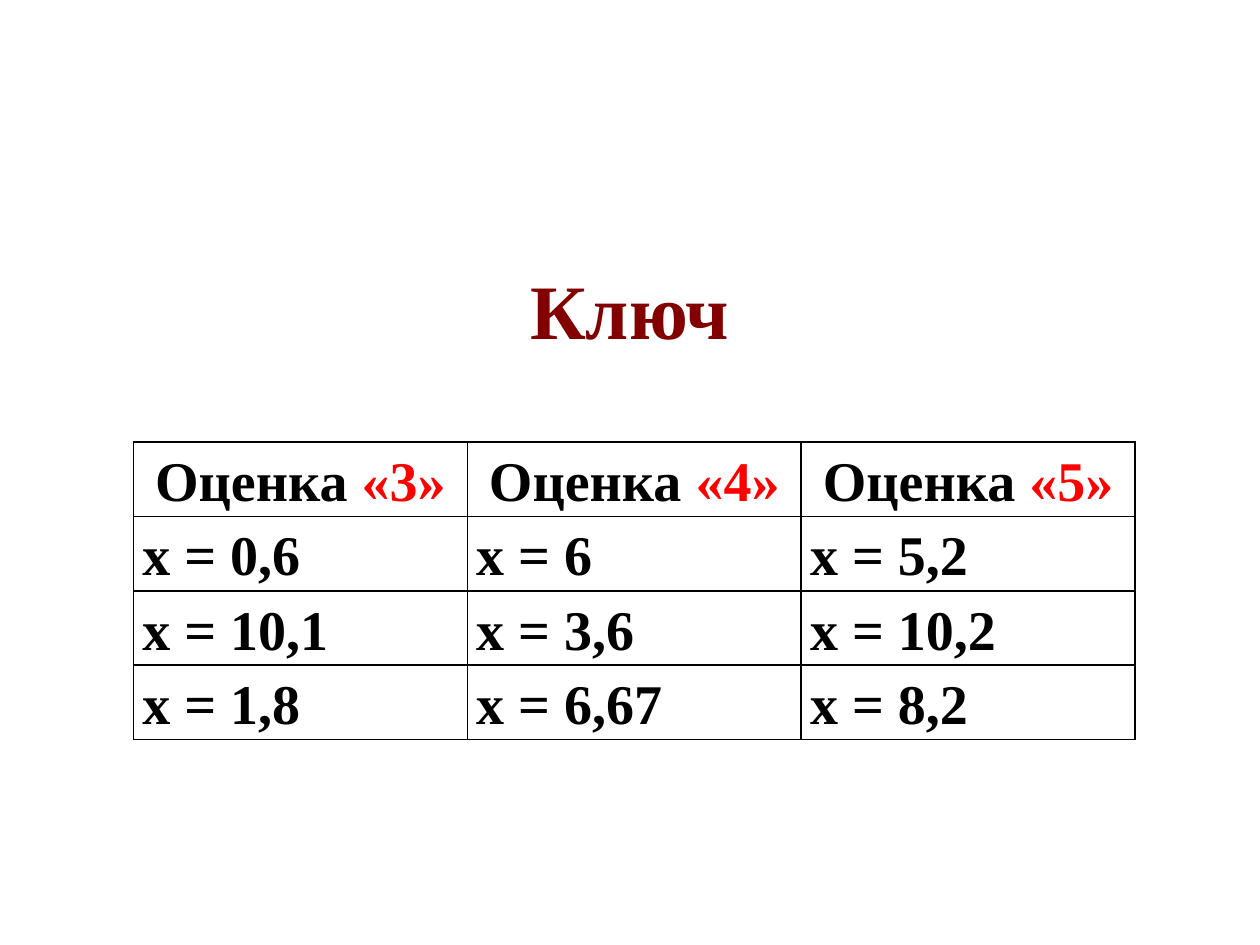
from dataclasses import dataclass

from lxml import etree
from pptx import Presentation
from pptx.dml.color import RGBColor
from pptx.enum.text import MSO_ANCHOR, PP_ALIGN
from pptx.oxml.ns import qn
from pptx.util import Inches, Pt

CENTER, JUSTIFY = PP_ALIGN.CENTER, PP_ALIGN.JUSTIFY
MIDDLE = MSO_ANCHOR.MIDDLE
TITLE_ONLY = 5

TITLE = "Ключ"
GRADES = ["«3»", "«4»", "«5»"]
ANSWERS = [
    ["0,6", "6", "5,2"],
    ["10,1", "3,6", "10,2"],
    ["1,8", "6,67", "8,2"],
]


@dataclass(frozen=True)
class Theme:
    font: str = "Times New Roman"
    title_size: int = 44
    table_size: int = 32
    title: str = "820000"
    ink: str = "000000"
    grade: str = "FF0000"
    paper: str = "FFFFFF"
    border_width: int = 1


THEME = Theme()
COLUMN_WIDTH, ROW_HEIGHT = 2.65, 0.59


def style_font(font, size, color):
    font.name = THEME.font
    font.size = Pt(size)
    font.bold = True
    font.color.rgb = RGBColor.from_string(color)


def add_borders(cell):
    properties = cell._tc.get_or_add_tcPr()
    for side in ("a:lnL", "a:lnR", "a:lnT", "a:lnB"):
        line = etree.SubElement(properties, qn(side), w=str(Pt(THEME.border_width)))
        fill = etree.SubElement(line, qn("a:solidFill"))
        etree.SubElement(fill, qn("a:srgbClr"), val=THEME.ink)


def fill_cell(cell, text, alignment, grade=None):
    """Write the cell's text, followed by the highlighted grade if there is one."""
    add_borders(cell)
    cell.fill.solid()
    cell.fill.fore_color.rgb = RGBColor.from_string(THEME.paper)
    cell.margin_left = cell.margin_right = Inches(0.07)
    cell.margin_top = cell.margin_bottom = 0
    paragraph = cell.text_frame.paragraphs[0]
    paragraph.alignment = alignment
    paragraph.line_spacing = 1.15
    paragraph.add_run().text = text
    style_font(paragraph.font, THEME.table_size, THEME.ink)
    if grade:
        mark = paragraph.add_run()
        mark.text = grade
        mark.font.color.rgb = RGBColor.from_string(THEME.grade)


def add_title(slide):
    title = slide.shapes.title
    title.left, title.top = Inches(0.27), Inches(1.94)
    title.width, title.height = Inches(9.45), Inches(1.02)
    title.text_frame.text = TITLE
    title.text_frame.vertical_anchor = MIDDLE
    heading = title.text_frame.paragraphs[0]
    heading.alignment = CENTER
    style_font(heading.font, THEME.title_size, THEME.title)


def add_answer_key(slide):
    row_count, column_count = len(ANSWERS) + 1, len(GRADES)
    table = slide.shapes.add_table(
        row_count, column_count, Inches(1.06), Inches(3.51),
        Inches(COLUMN_WIDTH * column_count), Inches(ROW_HEIGHT * row_count),
    ).table
    for column, grade in enumerate(GRADES):
        fill_cell(table.cell(0, column), "Оценка ", CENTER, grade)
    for row, answers in enumerate(ANSWERS, start=1):
        for column, answer in enumerate(answers):
            fill_cell(table.cell(row, column), f"х = {answer}", JUSTIFY)


def main():
    presentation = Presentation()
    presentation.slide_width, presentation.slide_height = Inches(10), Inches(7.5)
    slide = presentation.slides.add_slide(presentation.slide_layouts[TITLE_ONLY])
    add_title(slide)
    add_answer_key(slide)
    presentation.save("out.pptx")


if __name__ == "__main__":
    main()
